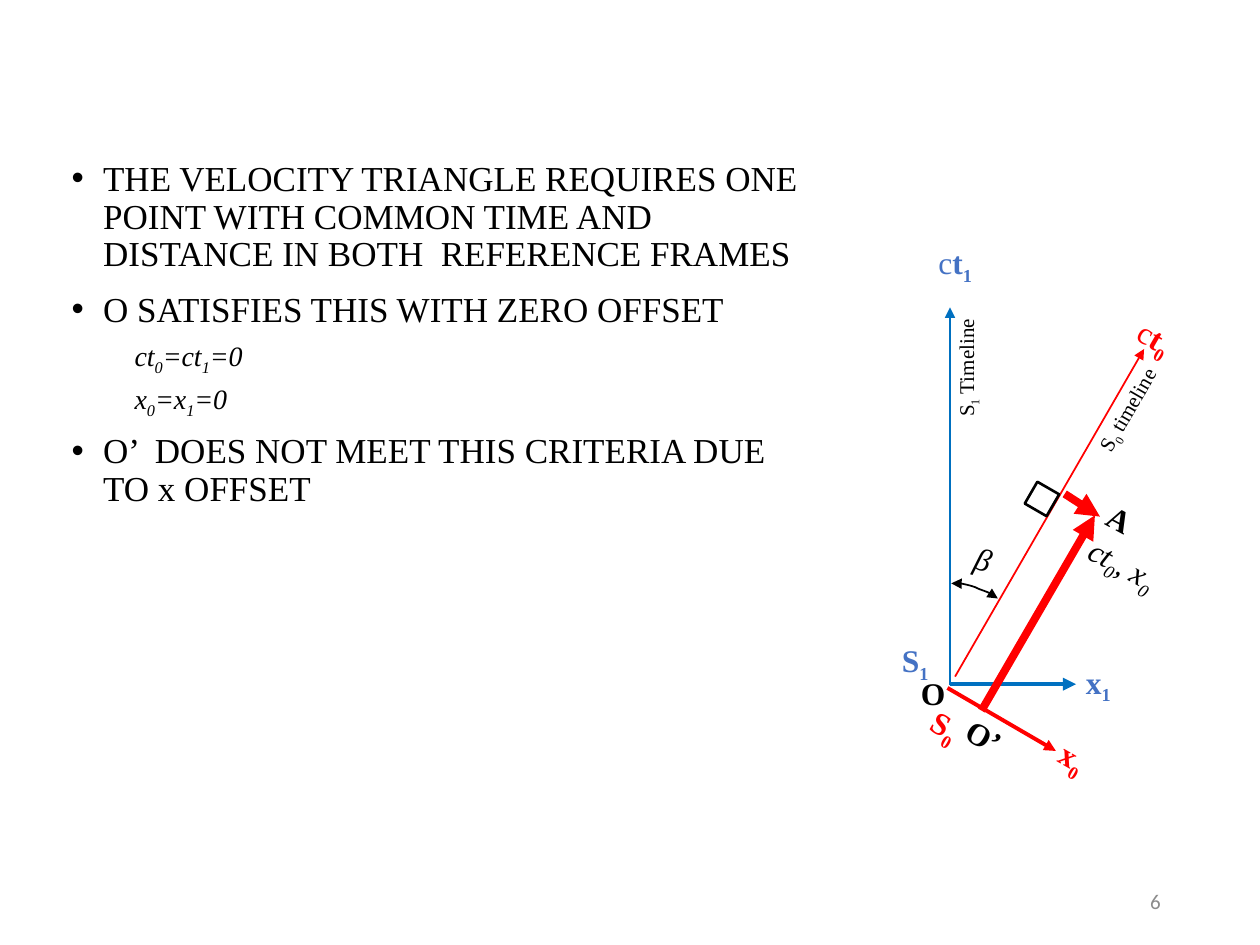
from pptx import Presentation
from pptx.dml.color import RGBColor
from pptx.enum.shapes import MSO_CONNECTOR as Connector, MSO_SHAPE as Shape
from pptx.enum.text import MSO_ANCHOR as Anchor, MSO_AUTO_SIZE as AutoSize, PP_ALIGN as Align
from pptx.oxml.ns import qn
from pptx.util import Emu, Pt
from lxml.etree import SubElement

PX = 9144  # EMU per px, at 100 px to the inch
RED, BLUE, SKY, BLACK, GREY = "FF0000", "4472C4", "0070C0", "000000", "8C8C8C"
SERIF = "Times New Roman"


def px(value):
    return Emu(round(value * PX))


def color(value):
    return RGBColor.from_string(value)


def apply(target, values):
    for name, value in values.items():
        setattr(target, name, value)


class Sketch:
    """Holds the text style and the current page."""

    base = {"name": SERIF, "size": 18, "color": BLACK, "bold": False, "italic": False}

    def __init__(self, page):
        self.page = page

    def spans(self, para, text, **style):
        """Add runs; the character after each underscore is a subscript."""
        values = {**self.base, **style}
        values["size"] = Pt(values["size"])
        tone = color(values.pop("color"))
        first, *others = text.split("_")
        pieces = [(first, False)]
        for part in others:
            pieces += [(part[0], True), (part[1:], False)]
        for piece, lowered in pieces:
            if not piece:
                continue
            span = para.add_run()
            span.text = piece
            apply(span.font, values)
            span.font.color.rgb = tone
            if lowered:
                span.font._element.set("baseline", "-25000")

    def box(self, at, turn=0, **frame_format):
        box = self.page.shapes.add_textbox(*map(px, at))
        box.rotation = turn
        apply(box.text_frame, {"word_wrap": True, **frame_format})
        return box.text_frame

    def label(self, at, *parts, turn=0, align=Align.LEFT, **style):
        """One-line label; each part is a (text, extra style) pair."""
        frame = self.box(at, turn, auto_size=AutoSize.SHAPE_TO_FIT_TEXT)
        para = frame.paragraphs[0]
        para.alignment = align
        for text, extra in parts:
            self.spans(para, text, **{**style, **extra})

    def bullets(self, at, items):
        frame = self.box(at)
        for index, (text, level) in enumerate(items):
            para = frame.add_paragraph() if index else frame.paragraphs[0]
            apply(para, {"level": level, "line_spacing": 0.9,
                         "space_before": Pt(5 if level else 10)})
            props = para._p.get_or_add_pPr()
            props.set("marL", str(px(50 if level else 25)))
            props.set("indent", str(px(0 if level else -25)))
            if level:
                SubElement(props, qn("a:buNone"))
            else:
                SubElement(props, qn("a:buFont")).set("typeface", "Arial")
                SubElement(props, qn("a:buChar")).set("char", "•")
            self.spans(para, text, size=16 if level else 20, italic=bool(level))

    def stroke(self, shape, tone, width, ends=()):
        shape.line.color.rgb = color(tone)
        shape.line.width = Pt(width)
        for end in ends:
            SubElement(shape.line._get_or_add_ln(), qn(f"a:{end}")).set("type", "triangle")

    def arrow(self, start, tip, tone, width):
        line = self.page.shapes.add_connector(Connector.STRAIGHT, *map(px, start + tip))
        SubElement(line._element.spPr, qn("a:effectLst"))
        self.stroke(line, tone, width, ["tailEnd"])

    def square(self, at, turn):
        shape = self.page.shapes.add_shape(Shape.RECTANGLE, *map(px, at))
        shape.rotation = turn
        shape.shadow.inherit = False
        shape.fill.background()
        self.stroke(shape, BLACK, 1.5)

    def arc(self, start, curves, steps=8):
        """Double-headed arrow along cubic curves."""
        points, here = [], start
        for a, b, c in curves:
            for step in range(1, steps + 1):
                t = step / steps
                u = 1 - t
                points.append(tuple(
                    round(PX * (u**3 * p + 3 * u * u * t * q + 3 * u * t * t * r + t**3 * s))
                    for p, q, r, s in zip(here, a, b, c)))
            here = c
        builder = self.page.shapes.build_freeform(*map(px, start))
        builder.add_line_segments(points, close=False)
        shape = builder.convert_to_shape()
        shape.shadow.inherit = False
        shape.fill.background()
        self.stroke(shape, BLACK, 1, ["headEnd", "tailEnd"])


def main():
    deck = Presentation()
    apply(deck, {"slide_width": px(1000), "slide_height": px(750)})
    page = deck.slides.add_slide(deck.slide_layouts[6])
    sketch = Sketch(page)

    # Explanation
    sketch.bullets((47, 123, 597, 544), [
        ("THE VELOCITY TRIANGLE REQUIRES ONE POINT WITH COMMON TIME AND "
         "DISTANCE IN BOTH  REFERENCE FRAMES", 0),
        ("O SATISFIES THIS WITH ZERO OFFSET", 0),
        ("ct_0=ct_1=0", 1),
        ("x_0=x_1=0", 1),
        ("O’  DOES NOT MEET THIS CRITERIA DUE TO x OFFSET", 0),
    ])

    # Axes of both frames, then the two vectors to A
    for start, tip, tone, width in [
        ((758, 537), (908, 277), RED, 1),
        ((754, 544), (754, 244), SKY, 1.5),
        ((754, 543), (854, 543), SKY, 2.5),
        ((752, 546), (838, 596), RED, 2.25),
        ((779, 564), (869, 409), RED, 4.5),
        ((845, 392), (873, 410), RED, 4.5),
    ]:
        sketch.arrow(start, tip, tone, width)

    # Right angle and angle β
    sketch.square((817, 386, 20, 20), 300)
    sketch.arc((755, 463), [((760, 462), (768, 464), (774, 466)),
                            ((779, 469), (785, 469), (792, 475))])

    # Bold point and axis names
    for text, left, top, width, turn, tone in [
        ("x_1", 852, 521, 73, 0, BLUE),
        ("S_1", 706, 504, 73, 0, BLUE),
        ("x_0", 830, 589, 73, 30, RED),
        ("S_0", 728, 564, 73, 30, RED),
        ("O", 721, 530, 47, 0, BLACK),
        ("O’", 757, 566, 54, 30, BLACK),
    ]:
        sketch.label((left, top, width, 40), (text, {}), turn=turn, color=tone, bold=True)

    # Time axis names
    for digit, left, top, turn, tone in [(1, 735, 188, 0, BLUE), (0, 892, 254, 30, RED)]:
        sketch.label((left, top, 73, 40), ("c", {}), (f"t_{digit}", {"bold": True}),
                     turn=turn, color=tone)

    # Timeline captions and angle name
    sketch.label((705, 264, 123, 30), ("S_1 Timeline", {}), turn=270, size=12)
    sketch.label((834, 310, 121, 30), ("S_0 timeline", {}), turn=300, size=12,
                 align=Align.CENTER)
    sketch.label((764, 428, 63, 40), ("β", {}), turn=16.8, italic=True)

    # Point A with its coordinates
    frame = sketch.box((860, 400, 79, 71), 28.3, word_wrap=False,
                       auto_size=AutoSize.SHAPE_TO_FIT_TEXT)
    sketch.spans(frame.paragraphs[0], "A", bold=True)
    sketch.spans(frame.add_paragraph(), "ct_0, x_0", italic=True)

    # Page number
    frame = sketch.box((706, 695, 225, 40), vertical_anchor=Anchor.MIDDLE)
    frame.paragraphs[0].alignment = Align.RIGHT
    sketch.spans(frame.paragraphs[0], "6", name="Calibri", size=12, color=GREY)

    deck.save("out.pptx")


if __name__ == "__main__":
    main()
